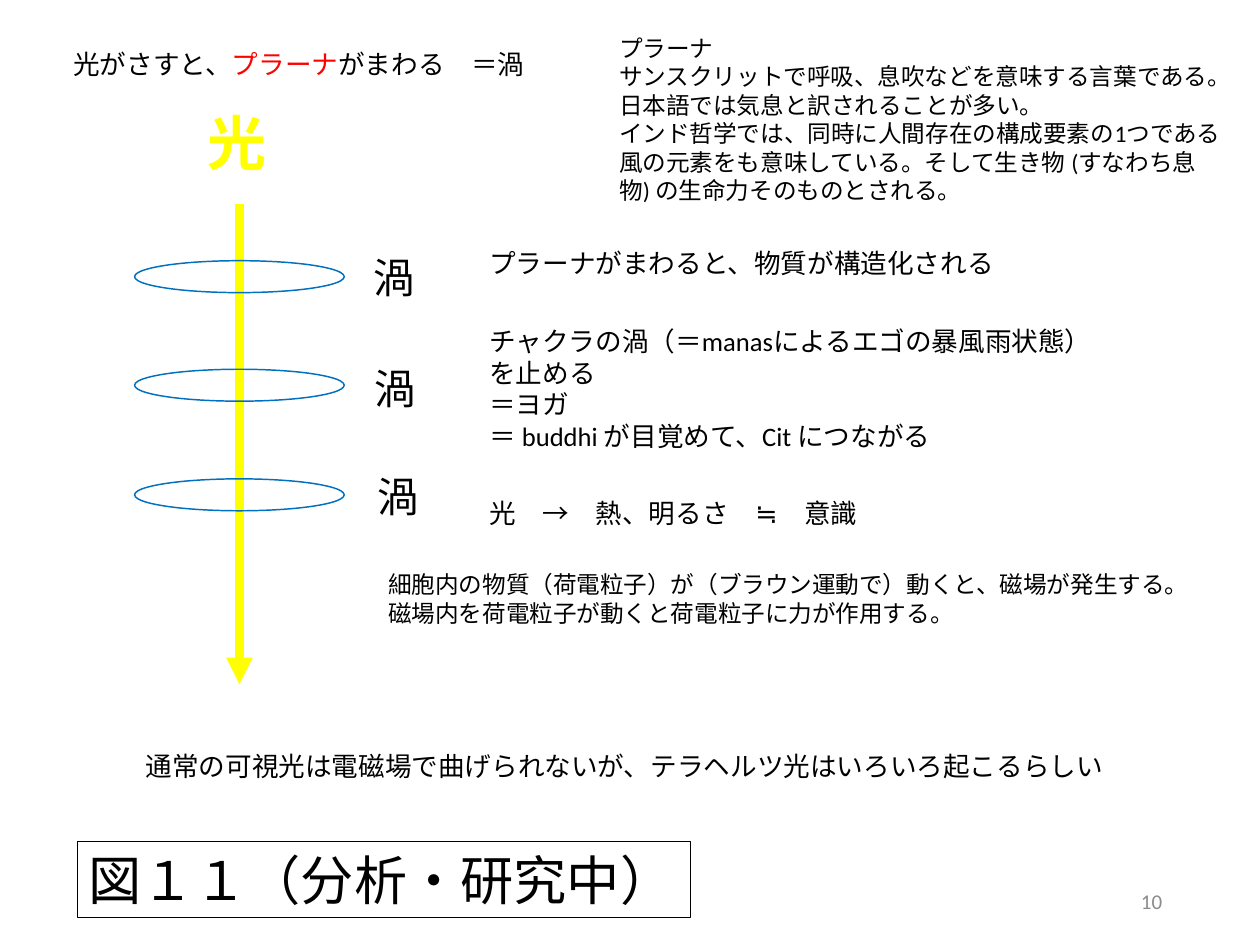
from lxml import etree
from pptx import Presentation
from pptx.dml.color import RGBColor
from pptx.enum.shapes import MSO_CONNECTOR, MSO_SHAPE
from pptx.enum.text import MSO_ANCHOR, MSO_AUTO_SIZE, PP_ALIGN
from pptx.oxml.ns import qn
from pptx.util import Inches, Pt

COLORS = {"text": "000000", "prana": "FF0000", "light": "FFFF00",
          "vortex": "0070C0", "number": "8C8C8C"}
FONT = "Calibri"

# Content: paragraphs are strings, or lists of (text, colour) runs
HEADING = [[("光がさすと、", "text"), ("プラーナ", "prana"), ("がまわる　＝渦", "text")]]
PRANA = [
    "プラーナ",
    "サンスクリットで呼吸、息吹などを意味する言葉である。日本語では気息と訳されることが多い。",
    "インド哲学では、同時に人間存在の構成要素の1つである風の元素をも意味している。"
    "そして生き物 (すなわち息物) の生命力そのものとされる。",
]
CHAKRA = ["チャクラの渦（＝manasによるエゴの暴風雨状態）", "を止める", "＝ヨガ",
          "＝ buddhi が目覚めて、Cit につながる"]
CELL = ["細胞内の物質（荷電粒子）が（ブラウン運動で）動くと、磁場が発生する。",
        "磁場内を荷電粒子が動くと荷電粒子に力が作用する。"]

# (paragraphs, (left, top, width, height), size)
NOTES = [
    (HEADING, (0.59, 0.4, 4.49, 0.4), 18),
    (PRANA, (5.72, 0.27, 5.88, 1.72), 16),
    (["プラーナがまわると、物質が構造化される"], (4.5, 2.27, 5, 0.4), 18),
    (CHAKRA, (4.5, 3, 5.93, 1.31), 18),
    (["光　→　熱、明るさ　≒　意識"], (4.5, 4.62, 3.71, 0.4), 18),
    (CELL, (3.55, 5.31, 7.83, 0.64), 16),
    (["通常の可視光は電磁場で曲げられないが、テラヘルツ光はいろいろ起こるらしい"],
     (1.27, 7, 9.29, 0.4), 18),
]
AXIS_X, LIGHT_TOP, LIGHT_BOTTOM = 2.25, 1.92, 6.43
RING_WIDTH, RING_HEIGHT = 1.97, 0.3
# (ring top, label left, label top)
VORTICES = [(2.45, 3.41, 2.32), (3.47, 3.42, 3.36), (4.5, 3.45, 4.38)]

presentation = Presentation()
presentation.slide_width, presentation.slide_height = Inches(11.84), Inches(8.88)
slide = presentation.slides.add_slide(presentation.slide_layouts[6])


def rgb(name):
    return RGBColor.from_string(COLORS[name])


def write(paragraphs, box, size=18, color="text", bold=False,
          align=PP_ALIGN.LEFT, anchor=MSO_ANCHOR.TOP, grow=True, border=None):
    holder = slide.shapes.add_textbox(*map(Inches, box))
    if border:
        holder.line.color.rgb = rgb(border)
        holder.line.width = Pt(0.75)
    frame = holder.text_frame
    frame.word_wrap = True
    frame.auto_size = MSO_AUTO_SIZE.SHAPE_TO_FIT_TEXT if grow else MSO_AUTO_SIZE.NONE
    frame.vertical_anchor = anchor
    for index, content in enumerate(paragraphs):
        paragraph = frame.add_paragraph() if index else frame.paragraphs[0]
        paragraph.alignment = align
        runs = [(content, color)] if isinstance(content, str) else content
        for text, run_color in runs:
            run = paragraph.add_run()
            run.text = text
            run.font.name, run.font.size, run.font.bold = FONT, Pt(size), bold
            run.font.color.rgb = rgb(run_color)


# Light and its arrow
light = slide.shapes.add_connector(MSO_CONNECTOR.STRAIGHT, Inches(AXIS_X), Inches(LIGHT_TOP),
                                   Inches(AXIS_X), Inches(LIGHT_BOTTOM))
light.line.color.rgb = rgb("light")
light.line.width = Pt(6)
etree.SubElement(light.line._get_or_add_ln(), qn("a:tailEnd"), type="triangle")
etree.SubElement(light._element.spPr, qn("a:effectLst"))
write(["光"], (1.85, 0.95, 0.8, 0.77), size=40, color="light", bold=True)

# Vortex rings centred on the arrow, with labels
for ring_top, label_left, label_top in VORTICES:
    ring = slide.shapes.add_shape(
        MSO_SHAPE.OVAL, Inches(AXIS_X - RING_WIDTH / 2), Inches(ring_top),
        Inches(RING_WIDTH), Inches(RING_HEIGHT))
    ring.shadow.inherit = False
    ring.fill.background()
    ring.line.color.rgb = rgb("vortex")
    ring.line.width = Pt(1)
    write(["渦"], (label_left, label_top, 0.64, 0.57), size=28)

# Explanations
for paragraphs, box, size in NOTES:
    write(paragraphs, box, size=size)

# Figure title and page number
write(["図１１（分析・研究中）"], (0.73, 7.91, 5.76, 0.71), size=36, border="text")
write(["10"], (8.36, 8.23, 2.66, 0.47), size=14.2, color="number",
      align=PP_ALIGN.RIGHT, anchor=MSO_ANCHOR.MIDDLE, grow=False)

presentation.save("out.pptx")
